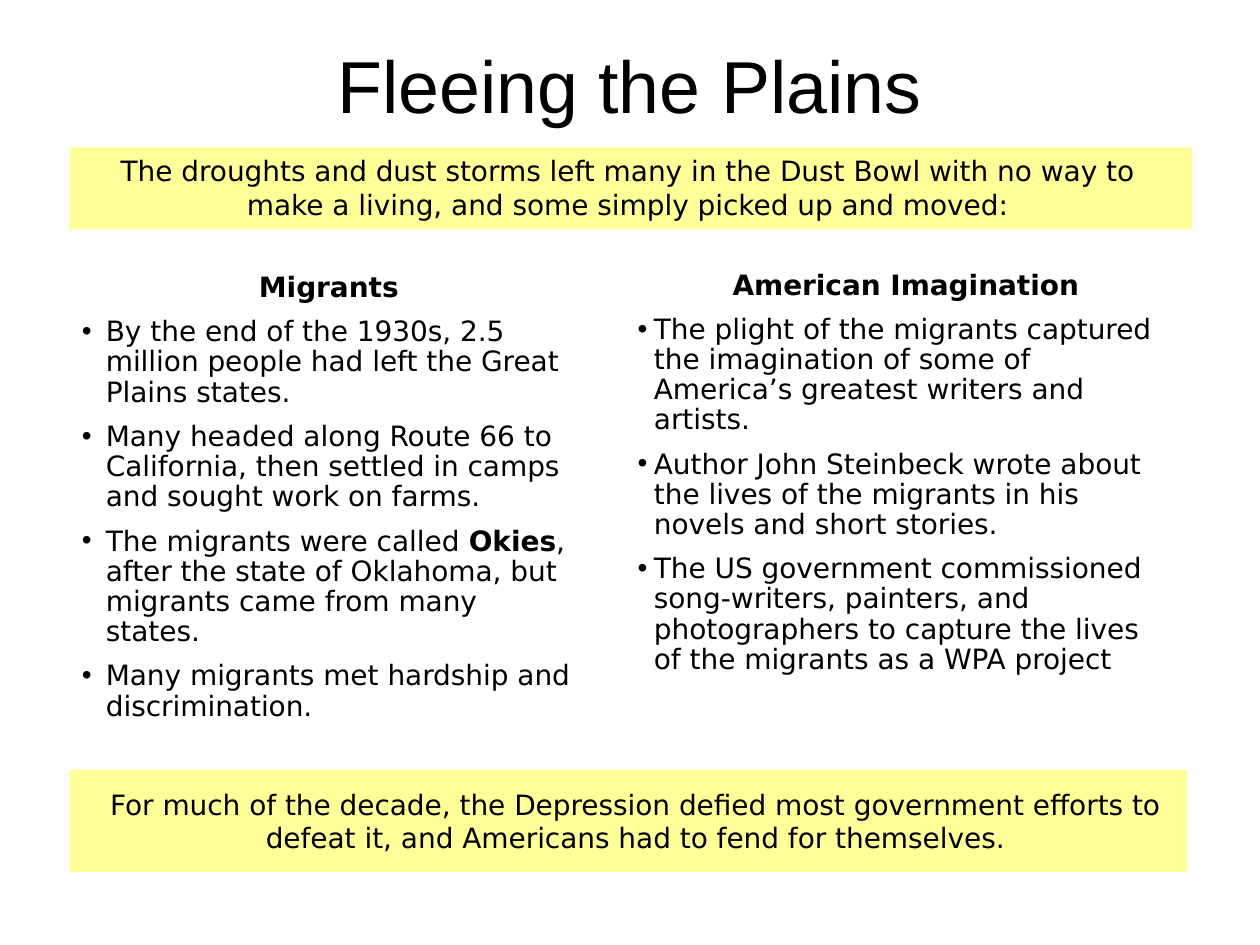
from lxml.etree import SubElement
from pptx import Presentation
from pptx.dml.color import RGBColor
from pptx.enum.shapes import MSO_SHAPE as Shape
from pptx.enum.text import MSO_ANCHOR as Anchor, MSO_AUTO_SIZE as AutoSize, PP_ALIGN as Align
from pptx.oxml.ns import qn
from pptx.util import Inches, Pt

WIDTH, HEIGHT = 10, 7.5
MARGIN = 0.55
BODY_FONT = "DejaVu Sans"
BLACK, YELLOW = "000000", "FFFF99"

MIGRANTS = [
    "By the end of the 1930s, 2.5 million people had left the Great Plains states.",
    "Many headed along Route 66 to California, then settled in camps and sought work on farms.",
    "The migrants were called **Okies**, after the state of Oklahoma, "
    "but migrants came from many states.",
    "Many migrants met hardship and discrimination.",
]
IMAGINATION = [
    "The plight of the migrants captured the imagination of some of "
    "America’s greatest writers and artists.",
    "Author John Steinbeck wrote about the lives of the migrants in his novels and short stories.",
    "The US government commissioned song-writers, painters, and photographers "
    "to capture the lives of the migrants as a WPA project",
]


def color(hex_value):
    return RGBColor.from_string(hex_value)


def place(shape, left, top, width, height):
    shape.left, shape.top = Inches(left), Inches(top)
    shape.width, shape.height = Inches(width), Inches(height)


def set_bullet(paragraph, bullet, indent):
    """Give the paragraph a hanging indent, and a bullet character if there is one."""
    properties = paragraph._p.get_or_add_pPr()
    properties.set("marL", str(Inches(indent)))
    properties.set("indent", str(-Inches(indent)))
    if bullet:
        SubElement(properties, qn("a:buChar"), char=bullet)
    else:
        SubElement(properties, qn("a:buNone"))


def write(paragraph, text, size=16, font=BODY_FONT, bold=False, align=Align.LEFT,
          before=0, spacing=1.0, bullet=None, indent=None):
    """Fill a paragraph; words between double asterisks become bold."""
    if indent is not None:
        set_bullet(paragraph, bullet, indent)
    paragraph.alignment = align
    paragraph.space_before = Pt(before)
    paragraph.line_spacing = spacing
    for number, part in enumerate(text.split("**")):
        run = paragraph.add_run()
        run.text = part
        run.font.name, run.font.size = font, Pt(size)
        run.font.bold = bold or number % 2 == 1
        run.font.color.rgb = color(BLACK)


def fill_column(body, box, heading, points, indent):
    place(body, *box)
    frame = body.text_frame
    frame.auto_size = AutoSize.NONE
    shared = dict(spacing=0.9, indent=indent)
    write(frame.paragraphs[0], heading, bold=True, align=Align.CENTER, **shared)
    for point in points:
        write(frame.add_paragraph(), point, bullet="•", before=8, **shared)


def add_banner(slide, top, width, height, text, anchor, insets):
    banner = slide.shapes.add_shape(Shape.RECTANGLE, Inches(MARGIN), Inches(top),
                                    Inches(width), Inches(height))
    banner.shadow.inherit = False
    banner.fill.solid()
    banner.fill.fore_color.rgb = color(YELLOW)
    banner.line.fill.background()
    frame = banner.text_frame
    frame.word_wrap = True
    frame.vertical_anchor = anchor
    frame.margin_left, frame.margin_right = map(Inches, insets)
    write(frame.paragraphs[0], text, align=Align.CENTER)


def main():
    deck = Presentation()
    deck.slide_width, deck.slide_height = Inches(WIDTH), Inches(HEIGHT)
    slide = deck.slides.add_slide(deck.slide_layouts.get_by_name("Two Content"))
    for extra in [p for p in slide.placeholders if p.placeholder_format.idx > 2]:
        extra.element.getparent().remove(extra.element)
    title, migrants, imagination = slide.placeholders

    place(title, 0.58, 0.25, 8.83, 0.83)
    write(title.text_frame.paragraphs[0], "Fleeing the Plains",
          size=42, font="Arial", align=Align.CENTER)

    add_banner(slide, 1.17, 8.91, 0.65,
               "The droughts and dust storms left many in the Dust Bowl with no way to "
               "make a living, and some simply picked up and moved:",
               Anchor.TOP, (0.1, 0.14))
    fill_column(migrants, (MARGIN, 2.12, 4.12, 3.77), "Migrants", MIGRANTS, 0.19)
    fill_column(imagination, (4.96, 2.1, 4.46, 3.41), "American Imagination", IMAGINATION, 0.13)
    add_banner(slide, 6.11, 8.87, 0.81,
               "For much of the decade, the Depression defied most government efforts to "
               "defeat it, and Americans had to fend for themselves.",
               Anchor.MIDDLE, (0.19, 0.07))

    deck.save("out.pptx")


if __name__ == "__main__":
    main()
